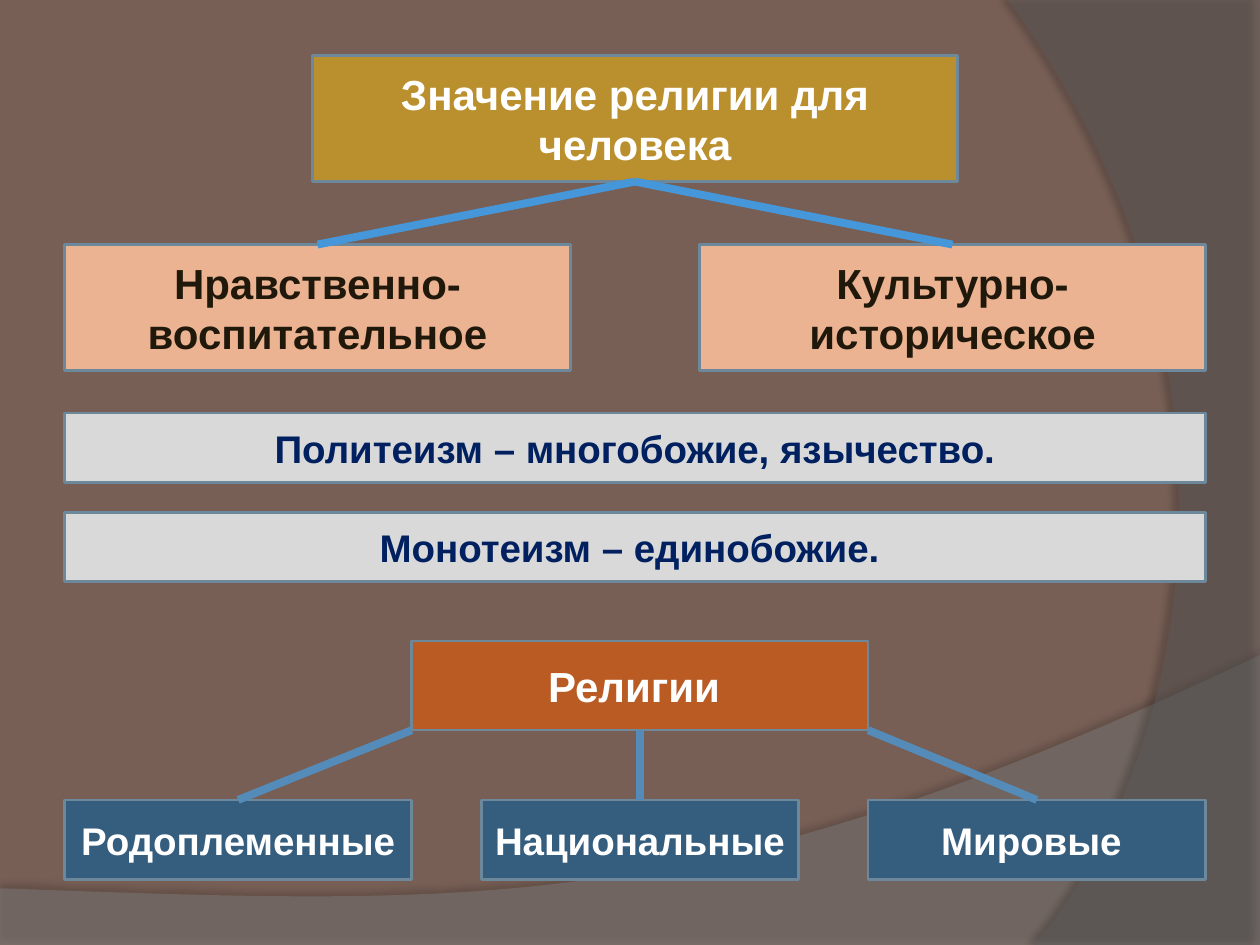
from lxml import etree
from pptx import Presentation
from pptx.dml.color import RGBColor
from pptx.enum.shapes import MSO_CONNECTOR, MSO_SHAPE
from pptx.enum.text import MSO_ANCHOR, MSO_AUTO_SIZE, PP_ALIGN
from pptx.oxml import parse_xml
from pptx.oxml.ns import nsdecls, qn
from pptx.util import Pt

BROWN = RGBColor(0x77, 0x5F, 0x55)
GREY = RGBColor(0x7F, 0x7F, 0x7F)
DARK_GREY = RGBColor(0x5E, 0x5E, 0x5E)
GOLD = RGBColor(0xBA, 0x8F, 0x2D)
PEACH = RGBColor(0xEB, 0xB3, 0x91)
LIGHT_GREY = RGBColor(0xD9, 0xD9, 0xD9)
ORANGE = RGBColor(0xB9, 0x5B, 0x22)
BLUE = RGBColor(0x35, 0x5D, 0x7E)
OUTLINE = RGBColor(0x6D, 0x87, 0x9B)
BRIGHT_LINE = RGBColor(0x45, 0x97, 0xDA)
SOFT_LINE = RGBColor(0x55, 0x8B, 0xB8)
WHITE = RGBColor(0xFF, 0xFF, 0xFF)
BLACK_BROWN = RGBColor(0x20, 0x19, 0x0B)
NAVY = RGBColor(0x00, 0x20, 0x60)

LEFT, RIGHT = 36.85, 688.85
TOP_SIDE, BOTTOM_SIDE = 0, 2


def curve(start, control_1, control_2, end, steps=60):
    """Return points along a cubic Bezier curve."""
    points = []
    for step in range(steps + 1):
        t = step / steps
        weights = ((1 - t) ** 3, 3 * t * (1 - t) ** 2, 3 * t * t * (1 - t), t ** 3)
        corners = (start, control_1, control_2, end)
        points.append(tuple(sum(w * corner[axis] for w, corner in zip(weights, corners))
                            for axis in (0, 1)))
    return points


def add_wave(page, points, color, opacity, shadow_opacity, distance, direction):
    """Draw a translucent outline with a soft shadow; opacities in percent."""
    points = [(Pt(x), Pt(y)) for x, y in points]
    builder = page.shapes.build_freeform(*points[0])
    builder.add_line_segments(points[1:], close=True)
    wave = builder.convert_to_shape()
    wave.fill.solid()
    wave.fill.fore_color.rgb = color
    wave.line.fill.background()
    properties = wave.element.spPr
    fill_color = properties.find(qn("a:solidFill"))[0]
    etree.SubElement(fill_color, qn("a:alpha"), val=str(opacity * 1000))
    properties.append(parse_xml(
        f'<a:effectLst {nsdecls("a")}><a:outerShdw blurRad="{Pt(4)}" dist="{Pt(distance)}" '
        f'dir="{direction * 60000}" algn="ctr" rotWithShape="0"><a:srgbClr val="000000">'
        f'<a:alpha val="{shadow_opacity * 1000}"/></a:srgbClr></a:outerShdw></a:effectLst>'))


def style_box(box, text, fill, color, size):
    box.fill.solid()
    box.fill.fore_color.rgb = fill
    box.line.color.rgb = OUTLINE
    box.line.width = Pt(1.5)
    frame = box.text_frame
    frame.text = text
    frame.word_wrap = True
    frame.auto_size = MSO_AUTO_SIZE.NONE
    frame.vertical_anchor = MSO_ANCHOR.MIDDLE
    paragraph = frame.paragraphs[0]
    paragraph.alignment = PP_ALIGN.CENTER
    font = paragraph.runs[0].font
    font.name, font.size, font.bold = "Arial", Pt(size), True
    font.color.rgb = color


def add_title(page, text, left, top, width, height):
    title = page.shapes.title
    title.left, title.top, title.width, title.height = map(Pt, (left, top, width, height))
    style_box(title, text, GOLD, WHITE, 24)
    page.shapes.element.append(title.element)  # in front of the waves
    return title


def add_box(page, text, left, top, width, height, fill, color, size):
    box = page.shapes.add_shape(MSO_SHAPE.RECTANGLE, *map(Pt, (left, top, width, height)))
    box.shadow.inherit = False
    style_box(box, text, fill, color, size)
    return box


def add_link(page, parent, child, color, start_x=None):
    """Join parent's bottom to child's top; start_x starts the line off-centre."""
    start = parent.left + parent.width // 2 if start_x is None else start_x
    link = page.shapes.add_connector(
        MSO_CONNECTOR.STRAIGHT, start, parent.top + parent.height,
        child.left + child.width // 2, child.top)
    if start_x is None:
        link.begin_connect(parent, BOTTOM_SIDE)
    link.end_connect(child, TOP_SIDE)
    link.line.color.rgb = color
    link.line.width = Pt(4.5)
    etree.SubElement(link.element.spPr, qn("a:effectLst"))


def add_background(page):
    page.background.fill.solid()
    page.background.fill.fore_color.rgb = BROWN
    bottom_edge = curve((720, 374.4), (402.5, 524.9), (281.5, 517.7), (0, 507.6))
    add_wave(page, [(0, 540), (720, 540)] + bottom_edge, GREY, 45, 35, 3.5, 270)
    side_edge = curve((591, 540), (673.2, 445.7), (733, 216), (576, 0))
    add_wave(page, [(720, 0), (720, 540)] + side_edge, DARK_GREY, 40, 45, 4, 180)


def add_meaning(page):
    title = add_title(page, "Значение религии для человека", 178.6, 31.75, 368.5, 72)
    width = 289.15
    for text, left in (("Нравственно-воспитательное", LEFT),
                       ("Культурно-историческое", RIGHT - width)):
        box = add_box(page, text, left, 139.75, width, 72, PEACH, BLACK_BROWN, 24)
        add_link(page, title, box, BRIGHT_LINE)


def add_definitions(page):
    texts = ("Политеизм – многобожие, язычество.", "Монотеизм – единобожие. ")
    for row, text in enumerate(texts):
        add_box(page, text, LEFT, 236 + row * 56.7, RIGHT - LEFT, 39.7, LIGHT_GREY, NAVY, 22)


def add_religions(page):
    root = add_box(page, "Религии ", 235.3, 366.25, 260.8, 51, ORANGE, WHITE, 24)
    kinds = (("Родоплеменные ", 198.45, root.left),
             ("Национальные ", 181.4, None),
             ("Мировые ", 192.75, root.left + root.width))
    gap = (RIGHT - LEFT - sum(width for _, width, _ in kinds)) / (len(kinds) - 1)
    left = LEFT
    for text, width, start_x in kinds:
        box = add_box(page, text, left, 457.1, width, 45.5, BLUE, WHITE, 22)
        add_link(page, root, box, SOFT_LINE, start_x)
        left += width + gap


def main():
    deck = Presentation()
    deck.slide_width, deck.slide_height = Pt(720), Pt(540)
    page = deck.slides.add_slide(deck.slide_layouts.get_by_name("Title Only"))
    add_background(page)
    add_meaning(page)
    add_definitions(page)
    add_religions(page)
    deck.save("out.pptx")


if __name__ == "__main__":
    main()
